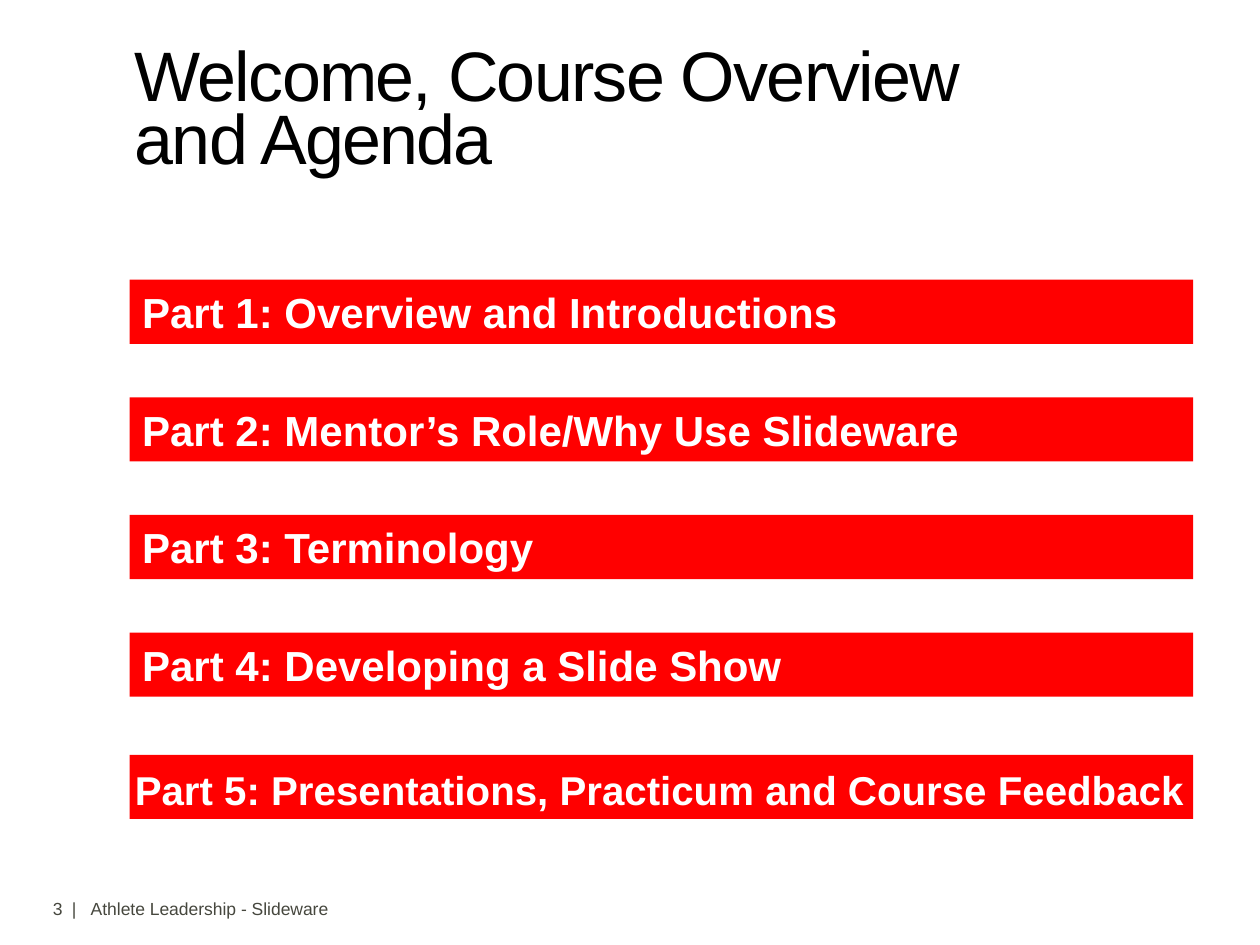
"""Build the course agenda slide with five red part bars."""
from lxml import etree
from pptx import Presentation
from pptx.dml.color import RGBColor
from pptx.enum.shapes import MSO_SHAPE
from pptx.enum.text import MSO_ANCHOR, PP_ALIGN
from pptx.oxml.ns import qn
from pptx.util import Inches, Pt

RECTANGLE = MSO_SHAPE.RECTANGLE
MIDDLE = MSO_ANCHOR.MIDDLE
LEFT = PP_ALIGN.LEFT
COLORS = {"bar": "FF0000", "bar_text": "FFFFFF", "title": "000000", "footer": "46473E"}
FONT = "Arial"

TITLE = "Welcome, Course Overview and Agenda"
PARTS = [
    "Part 1: Overview and Introductions",
    "Part 2: Mentor’s Role/Why Use Slideware",
    "Part 3: Terminology",
    "Part 4: Developing a Slide Show",
]
LAST_PART = "Part 5: Presentations, Practicum and Course Feedback"
FOOTER = "3\t|\tAthlete Leadership - Slideware"
FOOTER_TABS = [0.15, 0.3]
BAR_LEFT, BAR_WIDTH, BAR_HEIGHT = 1.03, 8.44, 0.51
FIRST_TOP, FOURTH_TOP, LAST_TOP = 2.22, 5.02, 5.99


def place(shape, left, top, width, height):
    shape.left, shape.top = Inches(left), Inches(top)
    shape.width, shape.height = Inches(width), Inches(height)


def write(shape, text, size, color, side, edge, bold=False):
    frame = shape.text_frame
    frame.word_wrap = True
    frame.margin_left = frame.margin_right = Inches(side)
    frame.margin_top = frame.margin_bottom = Inches(edge)
    frame.text = text
    para = frame.paragraphs[0]
    para.alignment = LEFT
    para.space_before = Pt(0)
    for span in para.runs:
        span.font.name = FONT
        span.font.size = Pt(size)
        span.font.bold = bold
        span.font.color.rgb = RGBColor.from_string(COLORS[color])
    return para


def add_bar(slide, text, top, size=24, side=0.1):
    bar = slide.shapes.add_shape(
        RECTANGLE, Inches(BAR_LEFT), Inches(top), Inches(BAR_WIDTH), Inches(BAR_HEIGHT))
    bar.shadow.inherit = False
    bar.fill.solid()
    bar.fill.fore_color.rgb = RGBColor.from_string(COLORS["bar"])
    bar.line.fill.background()
    bar.text_frame.vertical_anchor = MIDDLE
    return write(bar, text, size, "bar_text", side, 0.04, bold=True)


def add_title(slide):
    title = slide.shapes.title
    place(title, 1.03, 0.29, 7.31, 1.25)
    para = write(title, TITLE, 40, "title", 0.04, 0.04)
    title.text_frame.vertical_anchor = MIDDLE
    para.line_spacing = Pt(36)
    para.runs[0].font._element.set("spc", "-100")


def add_footer(slide):
    box = slide.shapes.add_textbox(Inches(0.35), Inches(7.09), Inches(4.65), Inches(0.24))
    para = write(box, FOOTER, 10, "footer", 0.07, 0.04)
    tabs = etree.SubElement(para._p.get_or_add_pPr(), qn("a:tabLst"))
    for position in FOOTER_TABS:
        etree.SubElement(tabs, qn("a:tab"), pos=str(Inches(position)), algn="l")


def main():
    deck = Presentation()
    deck.slide_width, deck.slide_height = Inches(10), Inches(7.5)
    slide = deck.slides.add_slide(deck.slide_layouts[5])
    add_footer(slide)
    add_title(slide)
    pitch = (FOURTH_TOP - FIRST_TOP) / (len(PARTS) - 1)
    for index, part in enumerate(PARTS):
        add_bar(slide, part, FIRST_TOP + index * pitch)
    add_bar(slide, LAST_PART, LAST_TOP, size=23, side=0.04).line_spacing = 1.1
    deck.save("out.pptx")


if __name__ == "__main__":
    main()
